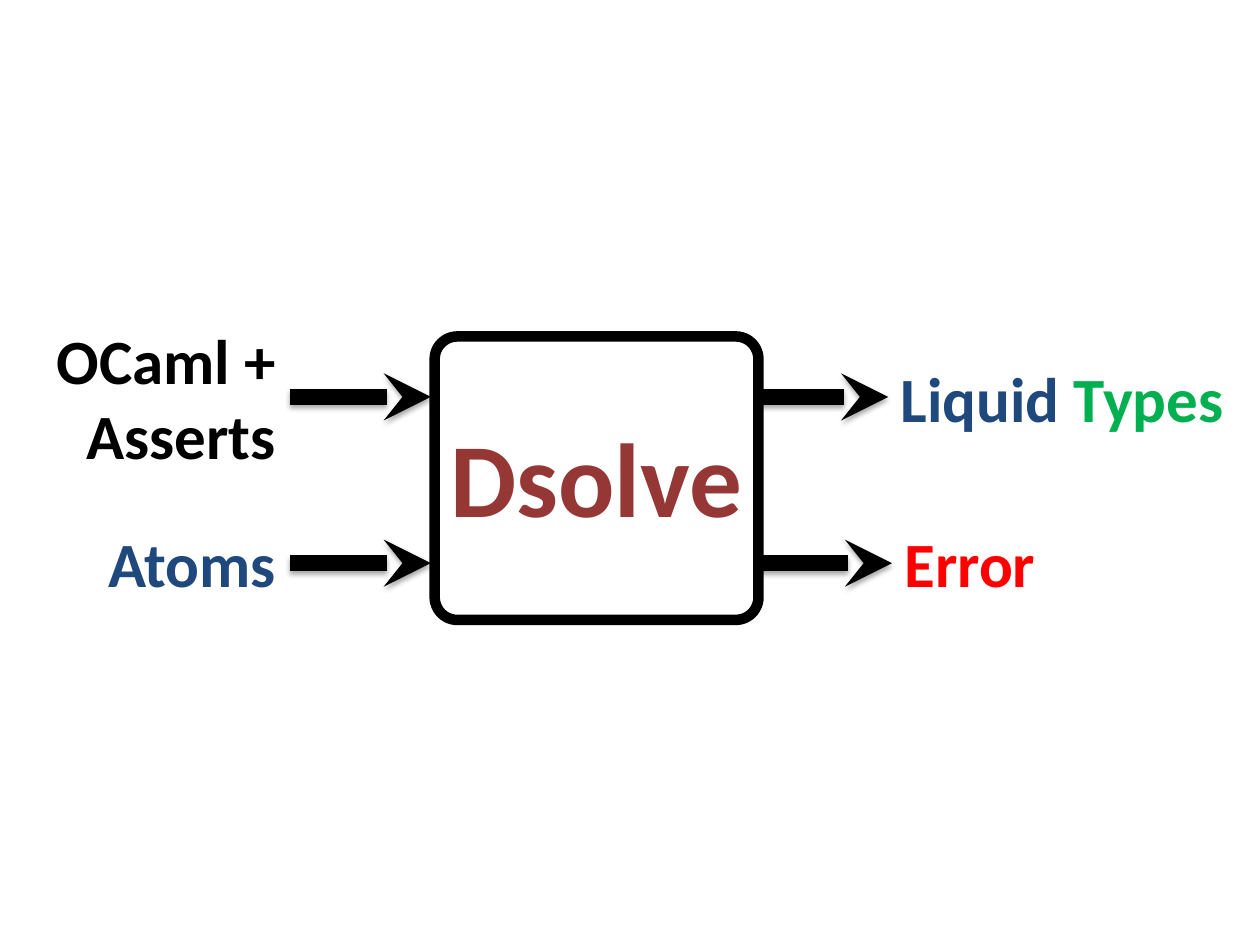
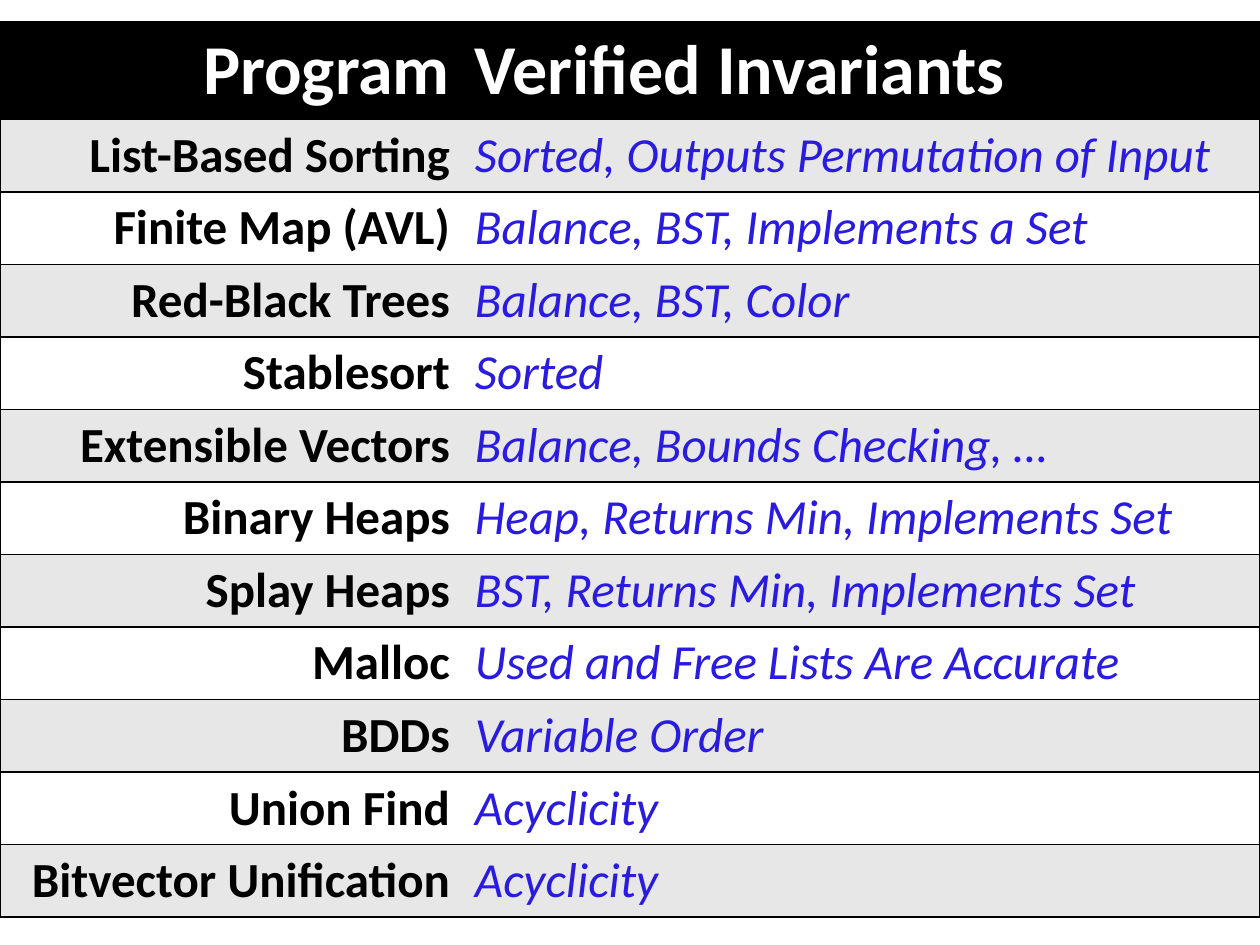
import dataclasses

import lxml.etree
import pptx
import pptx.dml.color
import pptx.enum.shapes
import pptx.enum.text
import pptx.oxml
import pptx.oxml.ns
import pptx.util

Inches = pptx.util.Inches
Pt = pptx.util.Pt
Align = pptx.enum.text.PP_ALIGN
Anchor = pptx.enum.text.MSO_ANCHOR
qn = pptx.oxml.ns.qn


@dataclasses.dataclass(frozen=True)
class Theme:
    font: str = "Calibri"
    black: str = "000000"
    white: str = "FFFFFF"
    gray: str = "E7E7E7"
    navy: str = "1F497D"
    green: str = "00B050"
    red: str = "FF0000"
    maroon: str = "953735"
    blue: str = "291BDF"
    label: int = 36
    tool: int = 60
    head: int = 40
    body: int = 28
    arrow: int = 9
    frame: int = 6
    rule: int = 1


THEME = Theme()

PROOFS = [
    ("List-Based Sorting", "Sorted, Outputs Permutation of Input"),
    ("Finite Map (AVL)", "Balance, BST, Implements a Set"),
    ("Red-Black Trees", "Balance, BST, Color"),
    ("Stablesort", "Sorted"),
    ("Extensible Vectors", "Balance, Bounds Checking, …"),
    ("Binary Heaps", "Heap, Returns Min, Implements Set"),
    ("Splay Heaps", "BST, Returns Min, Implements Set"),
    ("Malloc", "Used and Free Lists Are Accurate"),
    ("BDDs", "Variable Order"),
    ("Union Find", "Acyclicity"),
    ("Bitvector Unification", "Acyclicity"),
]


def rgb(code):
    return pptx.dml.color.RGBColor.from_string(code)


def style(run, size, color, bold=True, italic=False):
    font = run.font
    font.name = THEME.font
    font.size = Pt(size)
    font.bold = bold
    font.italic = italic
    font.color.rgb = rgb(color)


def add_label(slide, left, top, width, height, parts, align=Align.LEFT, wrap=True):
    box = slide.shapes.add_textbox(Inches(left), Inches(top), Inches(width), Inches(height))
    frame = box.text_frame
    frame.word_wrap = wrap
    para = frame.paragraphs[0]
    para.alignment = align
    for text, color in parts:
        run = para.add_run()
        run.text = text
        style(run, THEME.label, color)


def add_arrow(slide, start, end, y):
    kind = pptx.enum.shapes.MSO_CONNECTOR.STRAIGHT
    arrow = slide.shapes.add_connector(kind, Inches(start), Inches(y), Inches(end), Inches(y))
    arrow.line.width = Pt(THEME.arrow)
    arrow.line.color.rgb = rgb(THEME.black)
    tip = lxml.etree.SubElement(arrow.line._get_or_add_ln(), qn("a:tailEnd"))
    tip.set("type", "stealth")
    effects = lxml.etree.SubElement(arrow._element.spPr, qn("a:effectLst"))
    shadow = lxml.etree.SubElement(effects, qn("a:outerShdw"))
    shadow.set("blurRad", str(Pt(3.1)))
    shadow.set("dist", str(Pt(1.8)))
    shadow.set("dir", "5400000")
    shadow.set("rotWithShape", "0")
    tint = lxml.etree.SubElement(shadow, qn("a:srgbClr"), val=THEME.black)
    lxml.etree.SubElement(tint, qn("a:alpha"), val="35000")


def add_tool(slide, text):
    kind = pptx.enum.shapes.MSO_SHAPE.ROUNDED_RECTANGLE
    tool = slide.shapes.add_shape(kind, Inches(3.45), Inches(2.67), Inches(2.57), Inches(2.25))
    tool.adjustments[0] = 0.08
    tool.shadow.inherit = False
    tool.fill.solid()
    tool.fill.fore_color.rgb = rgb(THEME.white)
    tool.line.color.rgb = rgb(THEME.black)
    tool.line.width = Pt(THEME.frame)
    frame = tool.text_frame
    frame.text = text
    frame.word_wrap = False
    frame.vertical_anchor = Anchor.MIDDLE
    frame.margin_top = 0
    para = frame.paragraphs[0]
    para.alignment = Align.CENTER
    style(para.runs[0], THEME.tool, THEME.maroon)


def add_edge(cell, side, shown):
    edge = lxml.etree.SubElement(cell._tc.get_or_add_tcPr(), qn("a:ln" + side))
    edge.set("w", str(Pt(THEME.rule)))
    if shown:
        fill = lxml.etree.SubElement(edge, qn("a:solidFill"))
        lxml.etree.SubElement(fill, qn("a:srgbClr"), val=THEME.black)
    else:
        lxml.etree.SubElement(edge, qn("a:noFill"))


def set_cell(cell, text, first, fill, size, color, plain=False):
    for side, shown in (("L", first), ("R", not first), ("T", True), ("B", True)):
        add_edge(cell, side, shown)
    cell.fill.solid()
    cell.fill.fore_color.rgb = rgb(fill)
    cell.text_frame.text = text
    para = cell.text_frame.paragraphs[0]
    para.alignment = Align.RIGHT if first else Align.LEFT
    style(para.runs[0], size, color, bold=not plain, italic=plain)


def add_proofs(slide, top=0.17, height=7.1, head=0.77):
    shape = slide.shapes.add_table(
        len(PROOFS) + 1, 2, 0, Inches(top), Inches(10), Inches(height))
    table = shape.table
    table.first_row = False
    table.horz_banding = False
    for column, width in zip(table.columns, (3.67, 6.33)):
        column.width = Inches(width)
    for row in table.rows:
        row.height = Inches((height - head) / len(PROOFS))
    table.rows[0].height = Inches(head)
    for col, text in enumerate(("Program", "Verified Invariants")):
        set_cell(table.cell(0, col), text, col == 0, THEME.black, THEME.head, THEME.white)
    for row, (name, facts) in enumerate(PROOFS, 1):
        fill = THEME.gray if row % 2 else THEME.white
        set_cell(table.cell(row, 0), name, True, fill, THEME.body, THEME.black)
        set_cell(table.cell(row, 1), facts, False, fill, THEME.body, THEME.blue, plain=True)


def draw_flow(slide):
    upper, lower = 3.15, 4.47
    add_label(slide, -0.17, 2.5, 2.46, 1.31, [("OCaml + Asserts", THEME.black)], Align.RIGHT)
    add_label(slide, 0.42, 4.11, 1.87, 0.71, [("Atoms", THEME.navy)], Align.RIGHT)
    add_label(slide, 7.05, 2.8, 3.03, 0.71,
              [("Liquid", THEME.navy), (" Types", THEME.green)])
    add_label(slide, 7.08, 4.11, 1.25, 0.71, [("Error", THEME.red)], wrap=False)
    add_arrow(slide, 6.03, 7.05, upper)
    add_arrow(slide, 5.99, 7.08, lower)
    add_tool(slide, "Dsolve")
    for y in (upper, lower):
        add_arrow(slide, 2.3, 3.42, y)


def main():
    deck = pptx.Presentation()
    deck.slide_width = Inches(10)
    deck.slide_height = Inches(7.5)
    blank = deck.slide_layouts[6]
    for draw in (draw_flow, add_proofs):
        draw(deck.slides.add_slide(blank))
    deck.save("out.pptx")


if __name__ == "__main__":
    main()
